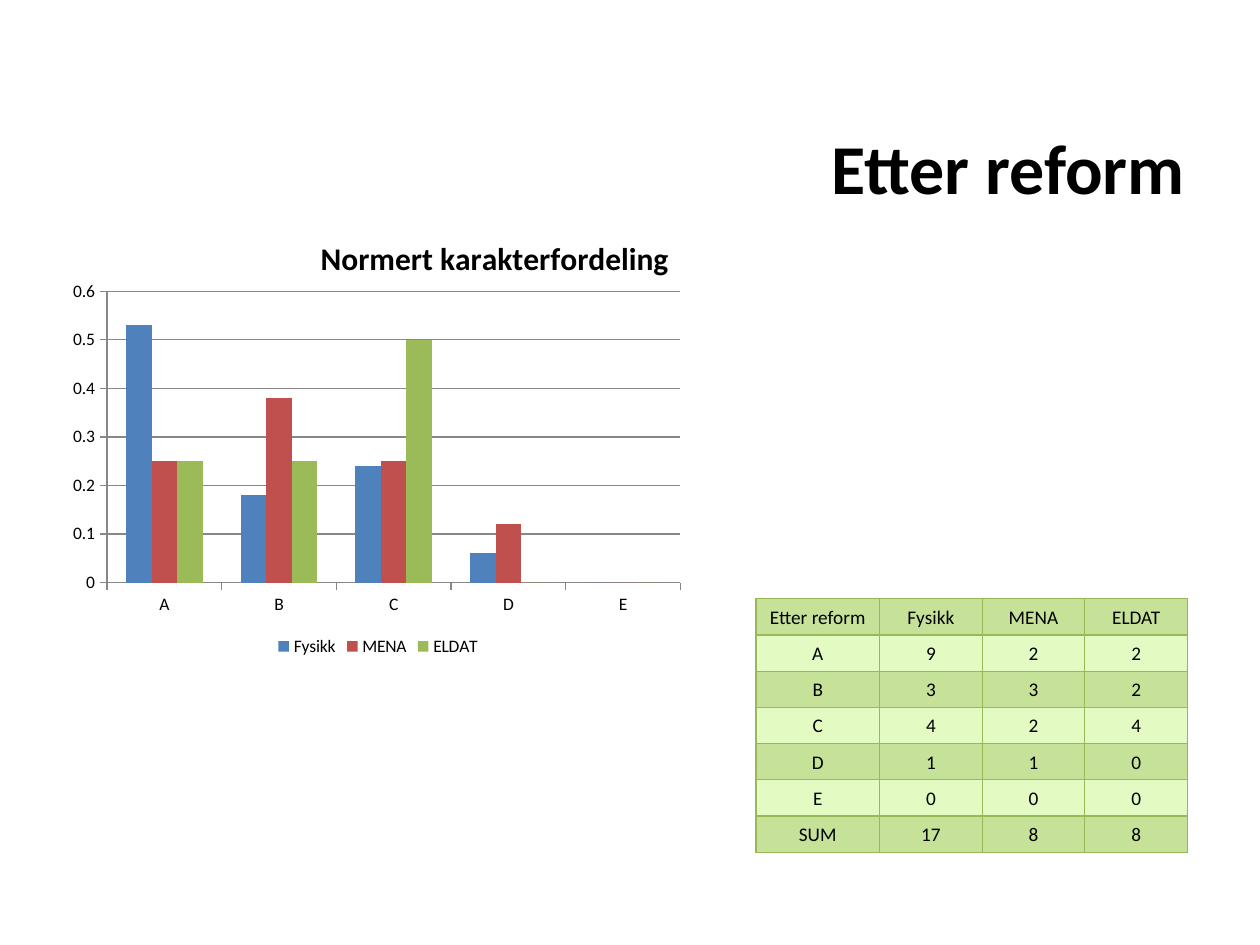
from pptx import Presentation
from pptx.chart.data import CategoryChartData
from pptx.dml.color import RGBColor
from pptx.enum.chart import XL_CHART_TYPE, XL_LEGEND_POSITION, XL_TICK_MARK
from pptx.enum.text import MSO_ANCHOR, MSO_AUTO_SIZE, PP_ALIGN
from pptx.oxml import parse_xml
from pptx.oxml.ns import nsdecls
from pptx.util import Cm, Pt

BLACK = RGBColor(0x00, 0x00, 0x00)
GRAY = RGBColor(0x87, 0x87, 0x87)
BLUE = RGBColor(0x4F, 0x81, 0xBD)
RED = RGBColor(0xC0, 0x50, 0x4D)
GREEN = RGBColor(0x9B, 0xBB, 0x59)
BORDER_GREEN = RGBColor(0x98, 0xB9, 0x55)
DARK_BAND = RGBColor(0xC6, 0xE1, 0x98)
LIGHT_BAND = RGBColor(0xE3, 0xFB, 0xC2)

GRADES = ["A", "B", "C", "D", "E"]
COUNTS = {
    "Fysikk": [9, 3, 4, 1, 0],
    "MENA": [2, 3, 2, 1, 0],
    "ELDAT": [2, 2, 4, 0, 0],
}


class SlideBuilder:
    font_name = "Calibri"

    def __init__(self, deck):
        self.page = deck.slides.add_slide(deck.slide_layouts[5])

    def style(self, font, size, bold=False):
        font.name = self.font_name
        font.size = Pt(size)
        font.bold = bold
        font.color.rgb = BLACK

    def add_run(self, para, text, size, bold=False):
        span = para.add_run()
        span.text = text
        self.style(span.font, size, bold)

    def title(self, text, left, top, width, height):
        box = self.page.shapes.title
        box.left, box.top, box.width, box.height = left, top, width, height
        frame = box.text_frame
        frame.word_wrap = False
        frame.auto_size = MSO_AUTO_SIZE.SHAPE_TO_FIT_TEXT
        frame.vertical_anchor = MSO_ANCHOR.TOP
        para = frame.paragraphs[0]
        para.alignment = PP_ALIGN.LEFT
        self.add_run(para, text, 40, True)

    def layout(self, **fractions):
        modes = "".join(f'<c:{side}Mode val="edge"/>' for side in "xy")
        values = "".join(f'<c:{key} val="{value}"/>' for key, value in fractions.items())
        target = '<c:layoutTarget val="inner"/>' if "w" in fractions else ""
        return parse_xml(
            f'<c:layout {nsdecls("c")}><c:manualLayout>{target}{modes}{values}'
            "</c:manualLayout></c:layout>"
        )

    def chart(self, heading, categories, series, colors, left, top, width, height):
        data = CategoryChartData()
        data.categories = categories
        for name, values in series.items():
            data.add_series(name, values)
        chart = self.page.shapes.add_chart(
            XL_CHART_TYPE.COLUMN_CLUSTERED, left, top, width, height, data
        ).chart
        self.style(chart.font, 10)

        chart.has_title = True
        title = chart.chart_title
        self.add_run(title.text_frame.paragraphs[0], heading, 18, True)
        title.include_in_layout = True
        for old in title._element.findall("c:layout", title._element.nsmap):
            title._element.remove(old)
        title._element.tx.addnext(self.layout(x=0.4, y=0.07))

        area = chart._chartSpace.chart.plotArea
        for old in area.findall("c:layout", area.nsmap):
            area.remove(old)
        area.insert(0, self.layout(x=0.07, y=0.2, w=0.91, h=0.63))

        chart.has_legend = True
        chart.legend.position = XL_LEGEND_POSITION.BOTTOM
        chart.legend.include_in_layout = False

        plot = chart.plots[0]
        plot.gap_width = 150
        plot.overlap = 0
        plot.vary_by_categories = False
        for bars, color in zip(plot.series, colors):
            bars.format.fill.solid()
            bars.format.fill.fore_color.rgb = color

        scale = chart.value_axis
        scale.minimum_scale, scale.maximum_scale, scale.major_unit = 0, 0.6, 0.1
        scale.has_major_gridlines = True
        for axis in (scale, chart.category_axis):
            axis.major_tick_mark = XL_TICK_MARK.OUTSIDE
        for item in (scale, chart.category_axis, scale.major_gridlines):
            item.format.line.color.rgb = GRAY
            item.format.line.width = Pt(0.75)

    def cell(self, cell, text, fill):
        cell.fill.solid()
        cell.fill.fore_color.rgb = fill
        cell.vertical_anchor = MSO_ANCHOR.MIDDLE
        cell.margin_left = cell.margin_right = cell.margin_top = Cm(0.03)
        cell.margin_bottom = 0
        para = cell.text_frame.paragraphs[0]
        para.alignment = PP_ALIGN.CENTER
        self.add_run(para, text, 11)
        properties = cell._tc.get_or_add_tcPr()
        for index, side in enumerate(("lnL", "lnR", "lnT", "lnB")):
            properties.insert(index, parse_xml(
                f'<a:{side} {nsdecls("a")} w="{Pt(0.75)}"><a:solidFill>'
                f'<a:srgbClr val="{BORDER_GREEN}"/></a:solidFill></a:{side}>'
            ))

    def table(self, rows, left, top, widths, row_height):
        table = self.page.shapes.add_table(
            len(rows), len(widths), left, top, sum(widths), row_height * len(rows)
        ).table
        table.first_row = table.horz_banding = False
        for column, width in zip(table.columns, widths):
            column.width = width
        for index, values in enumerate(rows):
            table.rows[index].height = row_height
            fill = LIGHT_BAND if index % 2 else DARK_BAND
            for position, value in enumerate(values):
                self.cell(table.cell(index, position), str(value), fill)


def main():
    deck = Presentation()
    deck.slide_width, deck.slide_height = Cm(25.4), Cm(19.05)
    builder = SlideBuilder(deck)

    builder.title("Etter reform", Cm(16.51), Cm(2.39), Cm(7.75), Cm(1.96))

    shares = {
        name: [round(count / sum(counts), 2) for count in counts]
        for name, counts in COUNTS.items()
    }
    builder.chart("Normert karakterfordeling", GRADES, shares, [BLUE, RED, GREEN],
                  Cm(1.27), Cm(4.01), Cm(12.7), Cm(9.32))

    rows = [["Etter reform", *COUNTS]]
    rows += [list(row) for row in zip(GRADES, *COUNTS.values())]
    rows.append(["SUM", *map(sum, COUNTS.values())])
    builder.table(rows, Cm(15.24), Cm(12.07), [Cm(2.49)] + [Cm(2.07)] * 3, Cm(0.73))

    deck.save("out.pptx")


if __name__ == "__main__":
    main()
